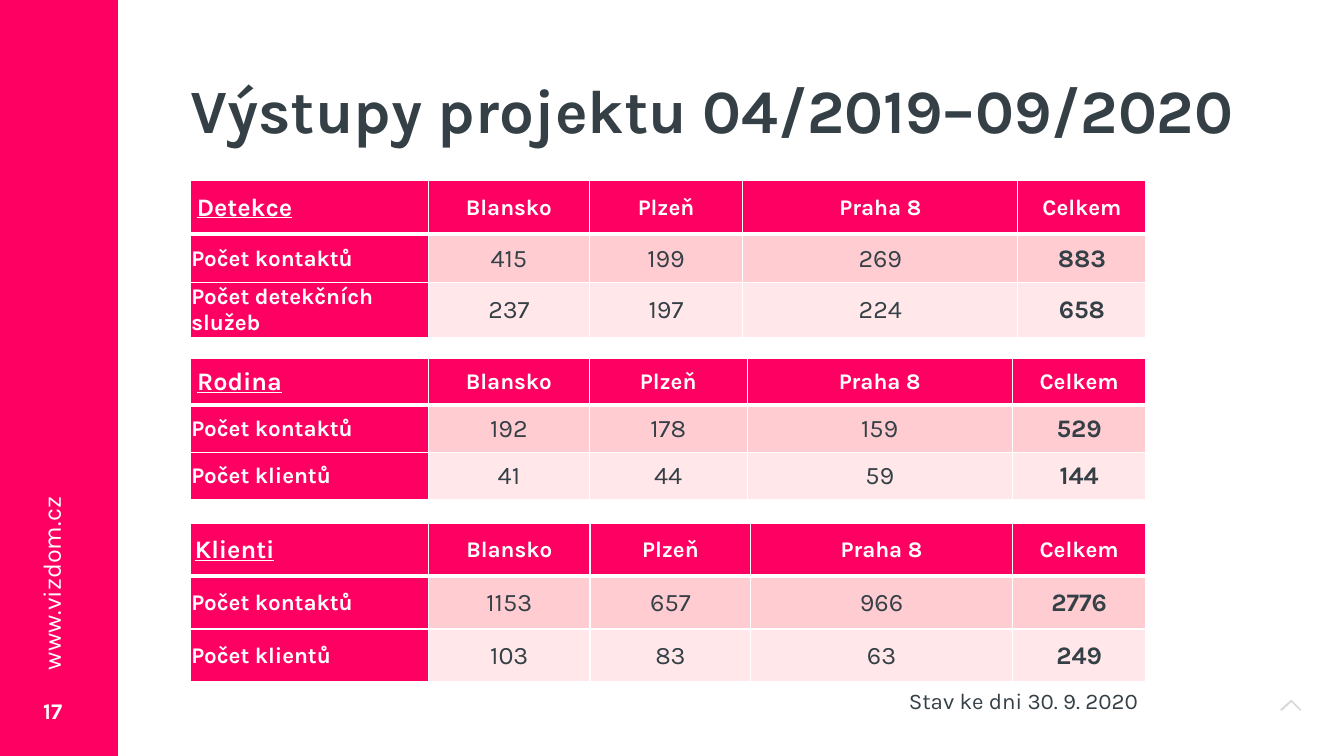
from lxml.etree import SubElement
from pptx import Presentation
from pptx.dml.color import RGBColor
from pptx.enum.shapes import MSO_SHAPE
from pptx.enum.text import MSO_ANCHOR, MSO_AUTO_SIZE, PP_ALIGN
from pptx.oxml import parse_xml
from pptx.oxml.ns import nsdecls, qn
from pptx.util import Cm, Pt

PINK = RGBColor(0xFE, 0x00, 0x61)
ROSE = RGBColor(0xFF, 0xCC, 0xD2)
PALE_ROSE = RGBColor(0xFF, 0xE7, 0xEA)
SLATE = RGBColor(0x34, 0x40, 0x46)
WHITE = RGBColor(0xFF, 0xFF, 0xFF)


def write(frame, text, size, color, bold=False, underline=False, align=PP_ALIGN.LEFT):
    para = frame.paragraphs[0]
    para.alignment = align
    span = para.add_run()
    span.text = text
    span.font.color.rgb = color
    looks = {"name": "Karla", "size": Pt(size), "bold": bold, "underline": underline}
    for name, value in looks.items():
        setattr(span.font, name, value)


def add_borders(cell, row):
    """Draw white cell borders, with a thick line below the header row."""
    properties = cell._tc.get_or_add_tcPr()
    for position, side in enumerate("LRTB"):
        width = Pt(3) if (row, side) in ((0, "B"), (1, "T")) else Pt(1)
        properties.insert(position, parse_xml(
            f'<a:ln{side} {nsdecls("a")} w="{width}"><a:solidFill>'
            f'<a:srgbClr val="{WHITE}"/></a:solidFill></a:ln{side}>'))


deck = Presentation()
deck.slide_width, deck.slide_height = Cm(33.87), Cm(19.05)
page = deck.slides.add_slide(deck.slide_layouts[5])

title = page.shapes.title
title.left, title.top, title.width, title.height = Cm(4.8), Cm(1.02), Cm(26.75), Cm(3.68)
title.fill.solid()
title.fill.fore_color.rgb = WHITE
title_format = {"margin_left": 0, "margin_right": 0, "word_wrap": True,
                "vertical_anchor": MSO_ANCHOR.MIDDLE, "auto_size": MSO_AUTO_SIZE.NONE}
for name, value in title_format.items():
    setattr(title.text_frame, name, value)
write(title.text_frame, "Výstupy projektu 04/2019–09/2020", 44, SLATE, bold=True)
title.text_frame.paragraphs[0].line_spacing = 0.9

# Up arrow in the corner, in hundredths of a centimetre
outline = page.shapes.build_freeform(3254, 1763, scale=Cm(0.01))
outline.add_line_segments([(3279, 1788), (3277, 1791), (3254, 1769), (3231, 1791), (3226, 1788)])
chevron = outline.convert_to_shape()

bar = page.shapes.add_shape(MSO_SHAPE.RECTANGLE, 0, 0, Cm(2.97), deck.slide_height)
for shape, color in ((chevron, SLATE), (bar, PINK)):
    shape.shadow.inherit = False
    shape.fill.solid()
    shape.fill.fore_color.rgb = color
    shape.line.fill.background()
chevron_color = chevron._element.spPr.find(qn("a:solidFill"))[0]
SubElement(chevron_color, qn("a:alpha"), val="20000")

# Text, place and size in cm, rotation, text size, colour, bold, alignment
labels = [
    ("17", (0.84, 17.15, 1.27, 1.52), 0, 16, WHITE, True, PP_ALIGN.LEFT),
    ("www.vizdom.cz", (-1.73, 13.59, 6.05, 1.04), 270, 18, WHITE, False, PP_ALIGN.LEFT),
    ("Stav ke dni 30. 9. 2020", (16.94, 17.2, 11.99, 0.94), 0, 16, SLATE, False, PP_ALIGN.RIGHT),
]
for text, place, rotation, size, color, bold, align in labels:
    box = page.shapes.add_textbox(*map(Cm, place))
    box.rotation = rotation
    box.text_frame.word_wrap = True
    box.text_frame.vertical_anchor = MSO_ANCHOR.MIDDLE if bold else MSO_ANCHOR.TOP
    write(box.text_frame, text, size, color, bold=bold, align=align)

# Heading, its indent, top, column widths and row heights in cm, data rows
towns = ["Blansko", "Plzeň", "Praha 8", "Celkem"]
outputs = [
    ("Detekce", 0.16, 4.55, (6, 4.05, 3.87, 6.93, 3.23), (1.35, 1.22, 1.22),
     [["Počet kontaktů", "415", "199", "269", "883"],
      ["Počet detekčních služeb", "237", "197", "224", "658"]]),
    ("Rodina", 0.17, 9.02, (6, 4.05, 3.98, 6.68, 3.37), (1.19, 1.19, 1.19),
     [["Počet kontaktů", "192", "178", "159", "529"],
      ["Počet klientů", "41", "44", "59", "144"]]),
    ("Klienti", 0.11, 13.19, (6, 4.07, 4.05, 6.59, 3.37), (1.33, 1.33, 1.33),
     [["Počet kontaktů", "1153", "657", "966", "2776"],
      ["Počet klientů", "103", "83", "63", "249"]]),
]
for heading, indent, top, widths, heights, data in outputs:
    rows = [[heading] + towns] + data
    table = page.shapes.add_table(len(rows), len(widths), Cm(4.8), Cm(top),
                                  Cm(sum(widths)), Cm(sum(heights))).table
    table.horz_banding = False
    for column, width in zip(table.columns, widths):
        column.width = Cm(width)
    for table_row, height in zip(table.rows, heights):
        table_row.height = Cm(height)
    for r, row in enumerate(rows):
        for c, text in enumerate(row):
            cell = table.cell(r, c)
            is_heading = r == c == 0
            is_label = r == 0 or c == 0
            cell_format = {"margin_left": Cm(indent if is_heading else 0.02),
                           "margin_right": Cm(0.02), "margin_top": Cm(0.02),
                           "margin_bottom": 0, "vertical_anchor": MSO_ANCHOR.MIDDLE}
            for name, value in cell_format.items():
                setattr(cell, name, value)
            cell.fill.solid()
            cell.fill.fore_color.rgb = PINK if is_label else (ROSE, PALE_ROSE)[r - 1]
            add_borders(cell, r)
            write(cell.text_frame, text,
                  size=16 if is_label and not is_heading else 18,
                  color=WHITE if is_label else SLATE,
                  bold=is_label or c == len(widths) - 1,
                  underline=is_heading,
                  align=PP_ALIGN.LEFT if c == 0 else PP_ALIGN.CENTER)

deck.save("out.pptx")
